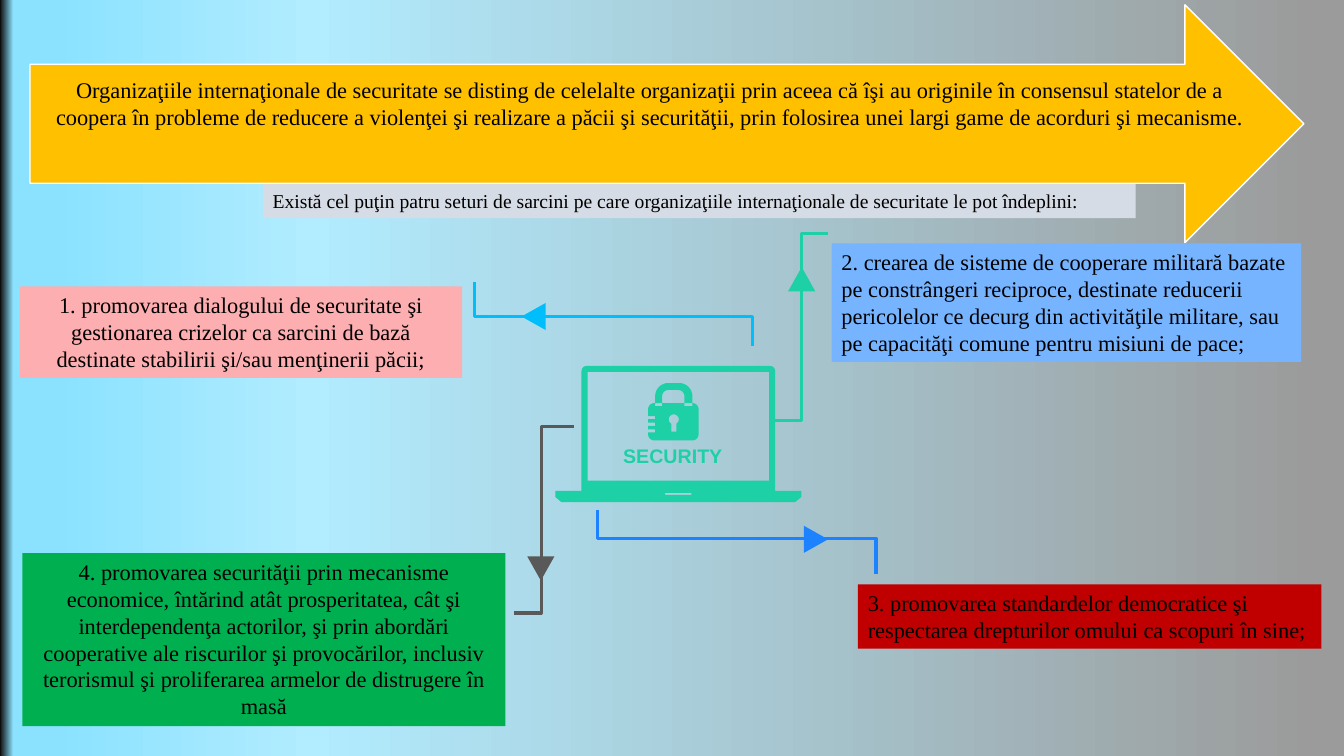
from math import cos, radians, sin

from lxml import etree
from pptx import Presentation
from pptx.dml.color import RGBColor
from pptx.enum.shapes import MSO_SHAPE
from pptx.enum.text import MSO_ANCHOR, MSO_AUTO_SIZE, PP_ALIGN
from pptx.oxml.ns import qn
from pptx.util import Pt

ARROW, WEDGE = MSO_SHAPE.RIGHT_ARROW, MSO_SHAPE.ISOSCELES_TRIANGLE
LEFT, CENTER = PP_ALIGN.LEFT, PP_ALIGN.CENTER
TOP, GROW = MSO_ANCHOR.TOP, MSO_AUTO_SIZE.SHAPE_TO_FIT_TEXT

BLACK = RGBColor(0x00, 0x00, 0x00)
WHITE = RGBColor(0xFF, 0xFF, 0xFF)
GRAY = RGBColor(0x59, 0x59, 0x59)
MINT = RGBColor(0x1E, 0xD0, 0xA6)
BLUE = RGBColor(0x1C, 0x82, 0xFF)
CYAN = RGBColor(0x00, 0xBD, 0xFB)
GOLD = RGBColor(0xFF, 0xC0, 0x00)
SILVER = RGBColor(0xD6, 0xDC, 0xE5)
PINK = RGBColor(0xFC, 0xAE, 0xB0)
SKY = RGBColor(0x77, 0xB4, 0xFF)
RED = RGBColor(0xC0, 0x00, 0x00)
GREEN = RGBColor(0x00, 0xB0, 0x50)
STOPS = [
    (2, RGBColor(0x9B, 0x9B, 0x9B)),
    (77, RGBColor(0xB1, 0xEC, 0xFF)),
    (96, RGBColor(0x8A, 0xE2, 0xFF)),
    (99, RGBColor(0x8A, 0xE2, 0xFF)),
    (100, RGBColor(0x0D, 0x0D, 0x0D)),
]


def arc(x, y, r, start, end, steps=8):
    """Points on a circle, clockwise in degrees from the right."""
    turns = [radians(start + (end - start) * i / steps) for i in range(steps + 1)]
    return [(x + r * cos(t), y + r * sin(t)) for t in turns]


def box(left, top, right, bottom):
    return [(left, top), (right, top), (right, bottom), (left, bottom)]


def write(frame, text, size=16, font="Times New Roman", color=BLACK,
          bold=False, align=LEFT):
    frame.word_wrap = True
    frame.auto_size = GROW
    frame.vertical_anchor = TOP
    par = frame.paragraphs[0]
    par.alignment = align
    run = par.add_run()
    run.text = text
    run.font.size = Pt(size)
    run.font.name = font
    run.font.bold = bold
    run.font.color.rgb = color


class Canvas:
    def __init__(self, slide):
        self.slide = slide
        self.shapes = slide.shapes
        self.stroke = 2.25

    def backdrop(self, stops, angle):
        fill = self.slide.background.fill
        fill.gradient()
        fill.gradient_angle = angle
        ramp = self.slide.element.find(".//" + qn("a:gsLst"))
        for old in list(ramp):
            ramp.remove(old)
        for pos, color in stops:
            stop = etree.SubElement(ramp, qn("a:gs"), pos=str(pos * 1000))
            etree.SubElement(stop, qn("a:srgbClr"), val=str(color))

    def paint(self, shape, fill=None, line=None, width=1):
        shape.shadow.inherit = False
        if fill is None:
            shape.fill.background()
        else:
            shape.fill.solid()
            shape.fill.fore_color.rgb = fill
        if line is None:
            shape.line.fill.background()
        else:
            shape.line.color.rgb = line
            shape.line.width = Pt(width)
        return shape

    def preset(self, kind, left, top, width, height, home=None, **style):
        shapes = home or self.shapes
        shape = shapes.add_shape(kind, Pt(left), Pt(top), Pt(width), Pt(height))
        return self.paint(shape, **style)

    def outline(self, rings, close=True, home=None, **style):
        pen = None
        for ring in rings:
            first, *rest = [(Pt(x), Pt(y)) for x, y in ring]
            if pen is None:
                pen = (home or self.shapes).build_freeform(*first, scale=1.0)
            else:
                pen.move_to(*first)
            pen.add_line_segments(rest, close=close)
        return self.paint(pen.convert_to_shape(), **style)

    def route(self, points, tip, turn, color):
        """A bent line with a triangle on it."""
        home = self.shapes.add_group_shape().shapes
        self.outline([points], close=False, home=home, line=color,
                     width=self.stroke)
        wedge = self.preset(WEDGE, *tip, 19.4, 17.3, home=home, fill=color)
        wedge.rotation = turn

    def label(self, text, left, top, width, height, fill=None, **form):
        shape = self.shapes.add_textbox(Pt(left), Pt(top), Pt(width), Pt(height))
        if fill is not None:
            shape.fill.solid()
            shape.fill.fore_color.rgb = fill
        write(shape.text_frame, text, **form)


def main():
    deck = Presentation()
    deck.slide_width, deck.slide_height = Pt(960), Pt(540)
    art = Canvas(deck.slides.add_slide(deck.slide_layouts[6]))
    art.backdrop(STOPS, 180)

    # Routes from the laptop to the four tasks
    routes = [
        ([(409.7, 304.6), (386.6, 304.6), (386.6, 437.8), (367.2, 437.8)],
         (376.6, 397.4), 180, GRAY),
        ([(549.4, 300.2), (572.4, 300.2), (572.4, 167), (591.8, 167)],
         (563, 190.8), 0, MINT),
        ([(427, 364.3), (427, 384.5), (625.7, 384.5), (625.7, 409.7)],
         (573.1, 376.6), 90, BLUE),
        ([(537.8, 247), (537.8, 226.1), (339.1, 226.1), (339.1, 201.6)],
         (371.5, 217.4), 270, CYAN),
    ]
    for route in routes:
        art.route(*route)

    # Laptop: case, screen and slot
    case = (arc(419, 265, 3.6, 180, 270) + arc(550.1, 265, 3.6, 270, 360)
            + [(553.7, 350.6), (572.4, 350.6), (572.4, 355), (568.1, 358.6),
               (401, 358.6), (396.7, 355), (396.7, 350.6), (415.4, 350.6)])
    screen = box(419.8, 265.7, 549.4, 343.4)
    slot = box(475.2, 352.1, 493.9, 353.5)
    art.outline([case, screen, slot], fill=MINT)

    # Padlock: body with notches, shackle, clips and keyhole
    notches = []
    for y in (308.9, 304.2, 299.5):
        notches += [(463, y), (468, y), (468, y - 2.2), (463, y - 2.2)]
    body = ([(468, 288)] + arc(477.4, 283, 9.4, 180, 270)
            + arc(485.2, 283, 9.4, 270, 360) + [(494.6, 288)]
            + arc(494.7, 292.3, 4.3, 270, 360) + arc(494.7, 310.3, 4.3, 0, 90)
            + arc(467.3, 310.3, 4.3, 90, 180) + notches
            + arc(467.3, 292.3, 4.3, 180, 270))
    gap = ([(473, 288)] + arc(477.4, 283, 4.4, 180, 270)
           + arc(484.5, 283, 4.4, 270, 360) + [(488.9, 288)])
    clips = [box(468, 288, 473, 290.2), box(488.9, 288, 494.6, 290.2)]
    key = arc(481.3, 299.6, 3.6, 120, 420, 20) + [(483.1, 308.4), (479.5, 308.4)]
    art.outline([body, gap, *clips, key], fill=MINT)
    art.label("SECURITY", 429.1, 313.9, 103, 24.2, size=14, font="Arial",
              color=MINT, bold=True, align=CENTER)

    # Headline arrow
    art.preset(ARROW, 21.4, 3.4, 910, 170, fill=GOLD, line=WHITE)
    art.label("Organizaţiile internaţionale de securitate se disting de celelalte "
              "organizaţii prin aceea că îşi au originile în consensul statelor de a "
              "coopera în probleme de reducere a violenţei şi realizare a păcii şi "
              "securităţii, prin folosirea unei largi game de acorduri şi mecanisme.",
              21.4, 51.1, 885.6, 46, align=CENTER)
    art.label("Există cel puţin patru seturi de sarcini pe care organizaţiile "
              "internaţionale de securitate le pot îndeplini:",
              187.7, 131.6, 623.5, 24.2, fill=SILVER, size=14)

    # The four tasks
    tasks = [
        ("1. promovarea dialogului de securitate şi gestionarea crizelor ca sarcini "
         "de bază destinate stabilirii şi/sau menţinerii păcii;",
         (14, 204.5, 316.1, 65.4), PINK, CENTER),
        ("2. crearea de sisteme de cooperare militară bazate pe constrângeri "
         "reciproce, destinate reducerii pericolelor ce decurg din activităţile "
         "militare, sau pe capacităţi comune pentru misiuni de pace;",
         (594, 173.8, 335.4, 84.8), SKY, LEFT),
        ("3. promovarea standardelor democratice şi respectarea drepturilor omului "
         "ca scopuri în sine;",
         (612.8, 417.4, 331.2, 46), RED, LEFT),
        ("4. promovarea securităţii prin mecanisme economice, întărind atât "
         "prosperitatea, cât şi interdependenţa actorilor, şi prin abordări "
         "cooperative ale riscurilor şi provocărilor, inclusiv terorismul şi "
         "proliferarea armelor de distrugere în masă",
         (16, 395.1, 345, 123.6), GREEN, CENTER),
    ]
    for text, place, fill, align in tasks:
        art.label(text, *place, fill=fill, align=align)

    deck.save("out.pptx")


if __name__ == "__main__":
    main()
